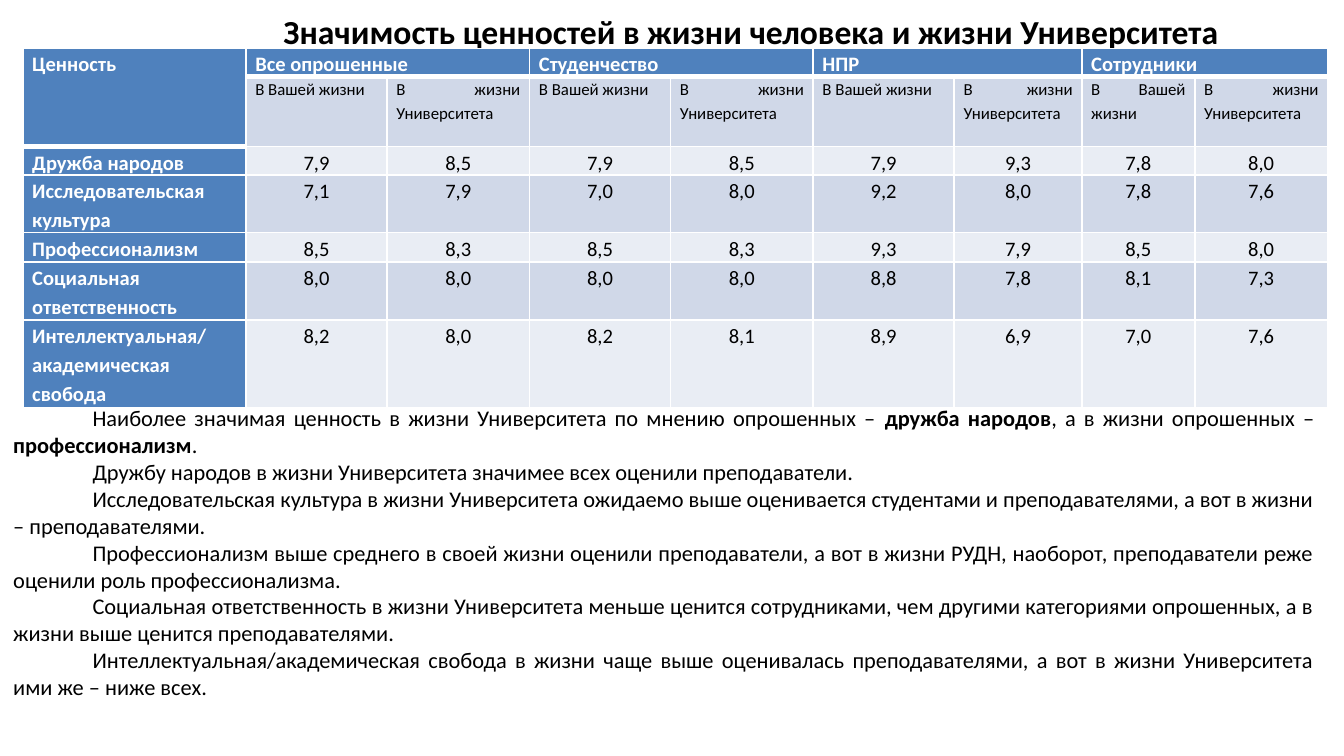
from dataclasses import dataclass

from lxml import etree
from pptx import Presentation
from pptx.dml.color import RGBColor
from pptx.enum.text import MSO_ANCHOR, PP_ALIGN
from pptx.oxml.ns import qn
from pptx.util import Inches, Pt

CENTER, JUSTIFY = PP_ALIGN.CENTER, PP_ALIGN.JUSTIFY
MIDDLE = MSO_ANCHOR.MIDDLE


@dataclass(frozen=True)
class Theme:
    font: str = "Calibri"
    black: str = "000000"
    white: str = "FFFFFF"
    header: str = "4F81BD"
    band_dark: str = "D0D8E8"
    band_light: str = "E9EDF4"
    title: int = 18
    body: int = 12
    cell: int = 11
    subhead: int = 9


THEME = Theme()

TITLE = "Значимость ценностей в жизни человека и жизни Университета"
GROUPS = ["Все опрошенные", "Студенчество", "НПР", "Сотрудники"]
SUBHEADS = ["В Вашей жизни", "В жизни Университета"]
VALUES = [
    ("Дружба народов", "7,9 8,5 7,9 8,5 7,9 9,3 7,8 8,0"),
    ("Исследовательская \nкультура", "7,1 7,9 7,0 8,0 9,2 8,0 7,8 7,6"),
    ("Профессионализм", "8,5 8,3 8,5 8,3 9,3 7,9 8,5 8,0"),
    ("Социальная \nответственность", "8,0 8,0 8,0 8,0 8,8 7,8 8,1 7,3"),
    ("Интеллектуальная/\nакадемическая свобода", "8,2 8,0 8,2 8,1 8,9 6,9 7,0 7,6"),
]
COLUMN_WIDTHS = [1.66, 1.05, 1.06, 1.05, 1.06, 1.05, 0.95, 0.84, 0.99]
ROW_HEIGHTS = [0.21, 0.52, 0.21, 0.43, 0.22, 0.43, 0.65]

# Each paragraph is a list of runs; every second run is bold.
CONCLUSIONS = [
    ["Наиболее значимая ценность в жизни Университета по мнению опрошенных – ",
     "дружба народов", ", а в жизни опрошенных – ", "профессионализм", "."],
    ["Дружбу народов в жизни Университета значимее всех оценили преподаватели."],
    ["Исследовательская культура в жизни Университета ожидаемо выше оценивается "
     "студентами и преподавателями, а вот в жизни – преподавателями."],
    ["Профессионализм выше среднего в своей жизни оценили преподаватели, а вот в "
     "жизни РУДН, наоборот, преподаватели реже оценили роль профессионализма."],
    ["Социальная ответственность в жизни Университета меньше ценится сотрудниками, "
     "чем другими категориями опрошенных, а в жизни выше ценится преподавателями."],
    ["Интеллектуальная/академическая свобода в жизни чаще выше оценивалась "
     "преподавателями, а вот в жизни Университета ими же – ниже всех."],
]


def set_font(p, size, color, bold=None):
    p.font.name = THEME.font
    p.font.size = Pt(size)
    p.font.color.rgb = RGBColor.from_string(color)
    p.font.bold = bold


def set_borders(cell, bottom):
    """White 1 pt lines on all sides, with the given width at the bottom."""
    tcPr = cell._tc.get_or_add_tcPr()
    for side, width in (("L", 1), ("R", 1), ("T", 1), ("B", bottom)):
        ln = etree.SubElement(tcPr, qn(f"a:ln{side}"), w=str(Pt(width)))
        fill = etree.SubElement(ln, qn("a:solidFill"))
        etree.SubElement(fill, qn("a:srgbClr"), val=THEME.white)


def style_cell(cell, fill, size, color, bold, align, bottom):
    set_borders(cell, bottom)
    cell.fill.solid()
    cell.fill.fore_color.rgb = RGBColor.from_string(fill)
    cell.margin_left = cell.margin_right = Inches(0.07)
    cell.margin_top = cell.margin_bottom = 0
    for p in cell.text_frame.paragraphs:
        p.alignment = align
        p.line_spacing = 1.15
        set_font(p, size, color, bold)


def add_text_box(slide, x, y, w, h):
    tf = slide.shapes.add_textbox(Inches(x), Inches(y), Inches(w), Inches(h)).text_frame
    tf.word_wrap = True
    return tf


def add_title(slide, x, y, w, h):
    tf = add_text_box(slide, x, y, w, h)
    tf.vertical_anchor = MIDDLE
    p = tf.paragraphs[0]
    p.text = TITLE
    p.alignment = CENTER
    set_font(p, THEME.title, THEME.black, True)


def add_values_table(slide, x, y):
    group_row = ["Ценность"] + [text for group in GROUPS for text in (group, "")]
    rows = [group_row, [""] + SUBHEADS * len(GROUPS)]
    rows += [[name] + scores.split() for name, scores in VALUES]
    table = slide.shapes.add_table(
        len(rows), len(COLUMN_WIDTHS), Inches(x), Inches(y),
        Inches(sum(COLUMN_WIDTHS)), Inches(sum(ROW_HEIGHTS))).table
    for column, width in zip(table.columns, COLUMN_WIDTHS):
        column.width = Inches(width)
    for row, height in zip(table.rows, ROW_HEIGHTS):
        row.height = Inches(height)

    for i, texts in enumerate(rows):
        band = THEME.band_dark if i % 2 else THEME.band_light
        for j, text in enumerate(texts):
            cell = table.cell(i, j)
            cell.text = text
            is_header = i == 0 or j == 0
            style_cell(
                cell,
                fill=THEME.header if is_header else band,
                size=THEME.subhead if i == 1 else THEME.cell,
                color=THEME.white if is_header else THEME.black,
                bold=is_header,
                align=JUSTIFY if is_header or i == 1 else CENTER,
                bottom=3 if i == 0 or (i, j) == (1, 0) else 1)

    table.cell(0, 0).merge(table.cell(1, 0))
    for j in range(1, len(COLUMN_WIDTHS), 2):
        table.cell(0, j).merge(table.cell(0, j + 1))


def add_conclusions(slide, x, y, w, h):
    tf = add_text_box(slide, x, y, w, h)
    for i, runs in enumerate(CONCLUSIONS):
        p = tf.add_paragraph() if i else tf.paragraphs[0]
        p.alignment = JUSTIFY
        p._p.get_or_add_pPr().set("indent", str(Inches(0.59)))
        set_font(p, THEME.body, THEME.black)
        for k, text in enumerate(runs):
            r = p.add_run()
            r.text = text
            r.font.bold = k % 2 == 1


def main():
    prs = Presentation()
    prs.slide_width = Inches(10)
    prs.slide_height = prs.slide_width * 9 // 16
    slide = prs.slides.add_slide(prs.slide_layouts[6])
    add_title(slide, 1.09, 0, 9, 0.47)
    add_values_table(slide, 0.17, 0.36)
    add_conclusions(slide, 0, 2.96, 9.88, 2.32)
    prs.save("out.pptx")


if __name__ == "__main__":
    main()
